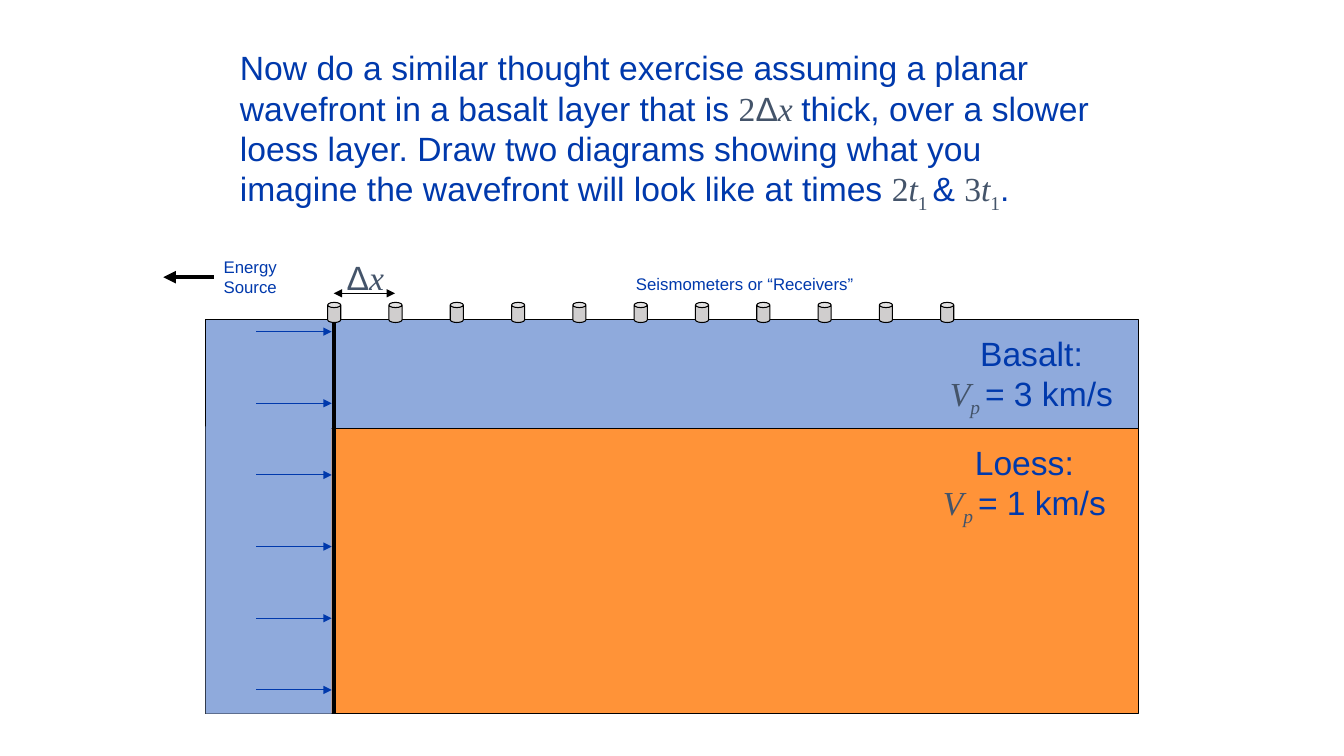
from lxml import etree
from pptx import Presentation
from pptx import util as u
from pptx.dml.color import RGBColor
from pptx.enum import shapes, text
from pptx.oxml.ns import qn

COLORS = {"ink": "0039AC", "math": "44546A", "basalt": "8FAADC",
          "loess": "FF9338", "receiver": "D0CECE", "black": "000000"}

# Run styles: plain words, upright numbers, Greek, variables, subscripts
WORDS = {"name": "Arial", "color": "ink"}
GREEK = {"name": "Arial", "color": "math"}
NUMBER = {"name": "Times New Roman", "color": "math"}
VARIABLE = {**NUMBER, "italic": True}
SUB = {**NUMBER, "sub": True}
SUB_VARIABLE = {**VARIABLE, "sub": True}

RECEIVERS = 11
DX = 6.08 / (RECEIVERS - 1)  # receiver spacing
ARROWS = 6


def rgb(name):
    return RGBColor.from_string(COLORS[name])


def inches(*lengths):
    return [u.Inches(length) for length in lengths]


def write(frame, lines, size, align=text.PP_ALIGN.LEFT):
    """Fill a frame with lines, each a list of (words, style) runs."""
    settings = {"word_wrap": False, "auto_size": text.MSO_AUTO_SIZE.NONE,
                "vertical_anchor": text.MSO_ANCHOR.TOP}
    for key, value in settings.items():
        setattr(frame, key, value)
    for number, line in enumerate(lines):
        paragraph = frame.add_paragraph() if number else frame.paragraphs[0]
        paragraph.alignment = align
        for words, style in line:
            run = paragraph.add_run()
            run.text = words
            run.font.color.rgb = rgb(style["color"])
            font = {"name": style["name"], "size": u.Pt(size),
                    "italic": style.get("italic", False), "bold": False}
            for key, value in font.items():
                setattr(run.font, key, value)
            if style.get("sub"):
                run._r.get_or_add_rPr().set("baseline", "-25000")


def label(slide, box, lines, size, align=text.PP_ALIGN.LEFT):
    write(slide.shapes.add_textbox(*inches(*box)).text_frame, lines, size, align)


def block(slide, kind, box, fill, outlined=True):
    shape = slide.shapes.add_shape(kind, *inches(*box))
    shape.shadow.inherit = False
    shape.fill.solid()
    shape.fill.fore_color.rgb = rgb(fill)
    if outlined:
        shape.line.color.rgb = rgb("black")
        shape.line.width = u.Pt(0.75)
    else:
        shape.line.fill.background()
    return shape


def line(slide, start, end, color="black", width=0.75, ends=()):
    """Draw a line; ends lists the arrowheads, headEnd before tailEnd."""
    connector = slide.shapes.add_connector(
        shapes.MSO_CONNECTOR.STRAIGHT, *inches(*start, *end))
    connector.line.color.rgb = rgb(color)
    connector.line.width = u.Pt(width)
    for tag in ends:
        etree.SubElement(connector.line._get_or_add_ln(), qn(f"a:{tag}"), type="triangle")
    etree.SubElement(connector._element.spPr, qn("a:effectLst"))


def add_question(slide, box):
    question = slide.shapes.title
    sides = ("left", "top", "width", "height")
    for side, length in zip(sides, inches(*box)):
        setattr(question, side, length)
    write(question.text_frame, [
        [("Now do a similar thought exercise assuming a planar", WORDS)],
        [("wavefront in a basalt layer that is ", WORDS), ("2", NUMBER),
         ("Δ", GREEK), ("x ", VARIABLE), ("thick, over a slower", WORDS)],
        [("loess layer. Draw two diagrams showing what you", WORDS)],
        [("imagine the wavefront will look like at times ", WORDS),
         ("2", NUMBER), ("t", VARIABLE), ("1 ", SUB), ("& ", WORDS),
         ("3", NUMBER), ("t", VARIABLE), ("1", SUB), (".", WORDS)],
    ], 24)


def add_layer(slide, box, fill, rock, speed, label_left):
    """One rock layer with its name and velocity at the right."""
    left, top, width, _ = box
    block(slide, shapes.MSO_SHAPE.RECTANGLE, box, fill)
    label(slide, (left + label_left, top + 0.08, 1.92, 0.91), [
        [(f"{rock}:", WORDS)],
        [("V", VARIABLE), ("p ", SUB_VARIABLE), (f"= {speed} km/s", WORDS)],
    ], 24, text.PP_ALIGN.CENTER)


def add_wavefront(slide, box, layer_top):
    """Basalt column behind the front, the front itself and its arrows."""
    left, top, width, height = box
    right, bottom = left + width, top + height
    block(slide, shapes.MSO_SHAPE.RECTANGLE,
          (left, layer_top - 0.02, width, bottom - layer_top + 0.02),
          "basalt", outlined=False)
    line(slide, (right + 0.02, top + 0.03), (right + 0.02, bottom), width=3)
    for row in range(ARROWS):
        y = top + 0.12 + row * 2 / 11 * height
        line(slide, (right - 0.75, y), (right, y), "ink", ends=["tailEnd"])


def add_receivers(slide, first_x, ground):
    """Receivers along the ground, with their spacing and caption."""
    for column in range(RECEIVERS):
        can = block(slide, shapes.MSO_SHAPE.CAN,
                    (first_x - 0.06 + column * DX, ground - 0.17, 0.13, 0.2), "receiver")
        can.adjustments[0] = 0.4
    line(slide, (first_x, ground - 0.26), (first_x + DX, ground - 0.26),
         ends=["headEnd", "tailEnd"])
    label(slide, (first_x + 0.03, ground - 0.67, 0.64, 0.5),
          [[("Δ", GREEK), ("x", VARIABLE)]], 24)
    label(slide, (first_x + 2.9, ground - 0.5, 2.43, 0.3),
          [[("Seismometers or “Receivers”", WORDS)]], 12)


def add_source(slide, box):
    left, top, width, height = box
    middle = top + height / 2
    label(slide, box, [[("Energy", WORDS)], [("Source", WORDS)]], 12)
    line(slide, (left, middle), (left - 0.5, middle), width=3, ends=["tailEnd"])


def add_section(slide, box):
    """Cross-section: two layers, the wavefront and the receivers."""
    left, top, width, height = box
    thickness, column = 1.08, 1.25
    boundary = top + thickness
    add_layer(slide, (left, top, width, thickness), "basalt", "Basalt", 3, 7.23)
    add_layer(slide, (left, boundary, width, height - thickness),
              "loess", "Loess", 1, 7.16)
    add_wavefront(slide, (left, top, column, height), boundary)
    add_receivers(slide, left + column + 0.02, top)
    add_source(slide, (left + 0.08, top - 0.67, 0.73, 0.5))


def main():
    deck = Presentation()
    deck.slide_width, deck.slide_height = inches(13.33, 7.5)
    slide = deck.slides.add_slide(deck.slide_layouts[5])
    add_question(slide, (2.28, 0.42, 8.71, 1.72))
    add_section(slide, (2.04, 3.17, 9.25, 3.91))
    deck.save("out.pptx")


if __name__ == "__main__":
    main()
